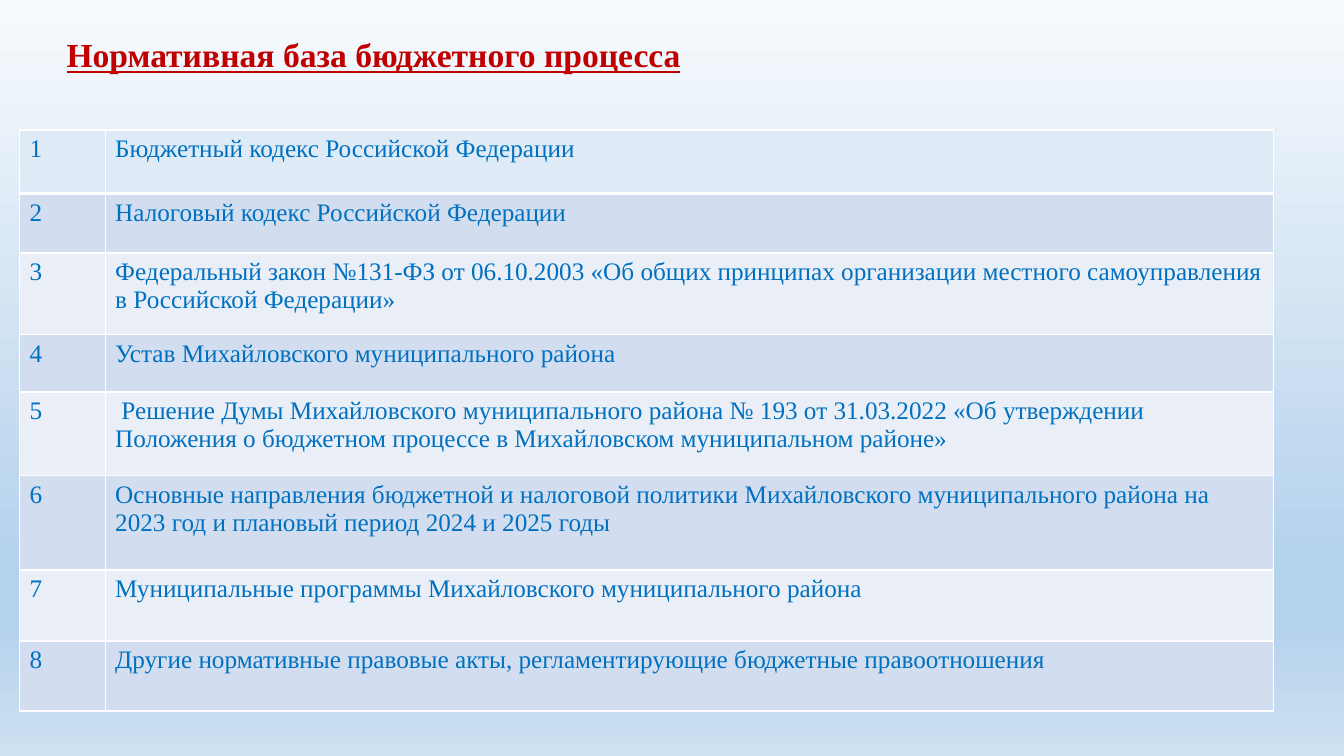
from dataclasses import dataclass

from lxml import etree
from pptx import Presentation
from pptx.dml.color import RGBColor
from pptx.enum.text import MSO_ANCHOR, MSO_AUTO_SIZE, PP_ALIGN
from pptx.oxml.ns import qn
from pptx.util import Pt

FONT = "Times New Roman"
TITLE_COLOUR, TEXT_COLOUR, BORDER_COLOUR = "C00000", "0070C0", "FFFFFF"
HEAD_FILL, EVEN_FILL, ODD_FILL = "DEEBF7", "D2DEEF", "EAEFF7"
BACKGROUND_STOPS = [(0, "F7FAFD"), (74, "B5D2EC"), (83, "B5D2EC"), (100, "CEE1F2")]
COLUMN_WIDTHS = [61.2, 834.5]


@dataclass
class Act:
    name: str
    height: float


ACTS = [
    Act("Бюджетный кодекс Российской Федерации", 45.4),
    Act("Налоговый кодекс Российской Федерации", 42.5),
    Act("Федеральный закон №131-ФЗ от 06.10.2003 «Об общих принципах организации "
        "местного самоуправления в Российской Федерации»", 58.3),
    Act("Устав Михайловского муниципального района", 41),
    Act(" Решение Думы Михайловского муниципального района № 193 от 31.03.2022 "
        "«Об утверждении Положения о бюджетном процессе в Михайловском "
        "муниципальном районе»", 59.8),
    Act("Основные направления бюджетной и налоговой политики Михайловского "
        "муниципального района на 2023 год и плановый период 2024 и 2025 годы", 67.3),
    Act("Муниципальные программы Михайловского муниципального района", 50.8),
    Act("Другие нормативные правовые акты, регламентирующие бюджетные "
        "правоотношения", 50),
]


def colour(code: str) -> RGBColor:
    return RGBColor.from_string(code)


def add_span(para, text: str, size: float, code: str):
    span = para.add_run()
    span.text = text
    span.font.name = FONT
    span.font.size = Pt(size)
    span.font.color.rgb = colour(code)
    return span


def add_colour(parent, code: str) -> None:
    etree.SubElement(parent, qn("a:srgbClr"), val=code)


def paint_background(page) -> None:
    fill = page.background.fill
    fill.gradient()
    fill.gradient_angle = 270
    stops = next(page.element.iter(qn("a:gsLst")))
    for stop in list(stops):
        stops.remove(stop)
    for percent, code in BACKGROUND_STOPS:
        add_colour(etree.SubElement(stops, qn("a:gs"), pos=str(percent * 1000)), code)


def set_borders(cell, top: float, bottom: float) -> None:
    props = cell._tc.get_or_add_tcPr()
    for side, width in (("L", 1), ("R", 1), ("T", top), ("B", bottom)):
        line = etree.SubElement(props, qn(f"a:ln{side}"), w=str(Pt(width)))
        add_colour(etree.SubElement(line, qn("a:solidFill")), BORDER_COLOUR)


def add_title(page, text: str) -> None:
    box = page.shapes.title
    box.left, box.top, box.width, box.height = Pt(40.3), Pt(20.9), Pt(457.2), Pt(36)
    frame = box.text_frame
    frame.word_wrap = False
    frame.auto_size = MSO_AUTO_SIZE.SHAPE_TO_FIT_TEXT
    frame.vertical_anchor = MSO_ANCHOR.TOP
    para = frame.paragraphs[0]
    para.alignment = PP_ALIGN.LEFT
    span = add_span(para, text, 24, TITLE_COLOUR)
    span.font.bold = span.font.underline = True


def add_acts_table(page, acts: list[Act]) -> None:
    table = page.shapes.add_table(
        len(acts), len(COLUMN_WIDTHS), Pt(13.9), Pt(92.9),
        Pt(sum(COLUMN_WIDTHS)), Pt(sum(act.height for act in acts))).table
    for column, width in zip(table.columns, COLUMN_WIDTHS):
        column.width = Pt(width)
    for index, act in enumerate(acts):
        table.rows[index].height = Pt(act.height)
        shade = HEAD_FILL if index == 0 else EVEN_FILL if index % 2 else ODD_FILL
        for cell, text in zip(table.rows[index].cells, (str(index + 1), act.name)):
            # A thick rule separates the first row from the rest
            set_borders(cell, top=3 if index == 1 else 1, bottom=3 if index == 0 else 1)
            cell.fill.solid()
            cell.fill.fore_color.rgb = colour(shade)
            span = add_span(cell.text_frame.paragraphs[0], text, 18, TEXT_COLOUR)
            span.font.bold = False


def main() -> None:
    deck = Presentation()
    deck.slide_width, deck.slide_height = Pt(960), Pt(540)
    page = deck.slides.add_slide(deck.slide_layouts[5])
    paint_background(page)
    add_title(page, "Нормативная база бюджетного процесса")
    add_acts_table(page, ACTS)
    deck.save("out.pptx")


if __name__ == "__main__":
    main()
